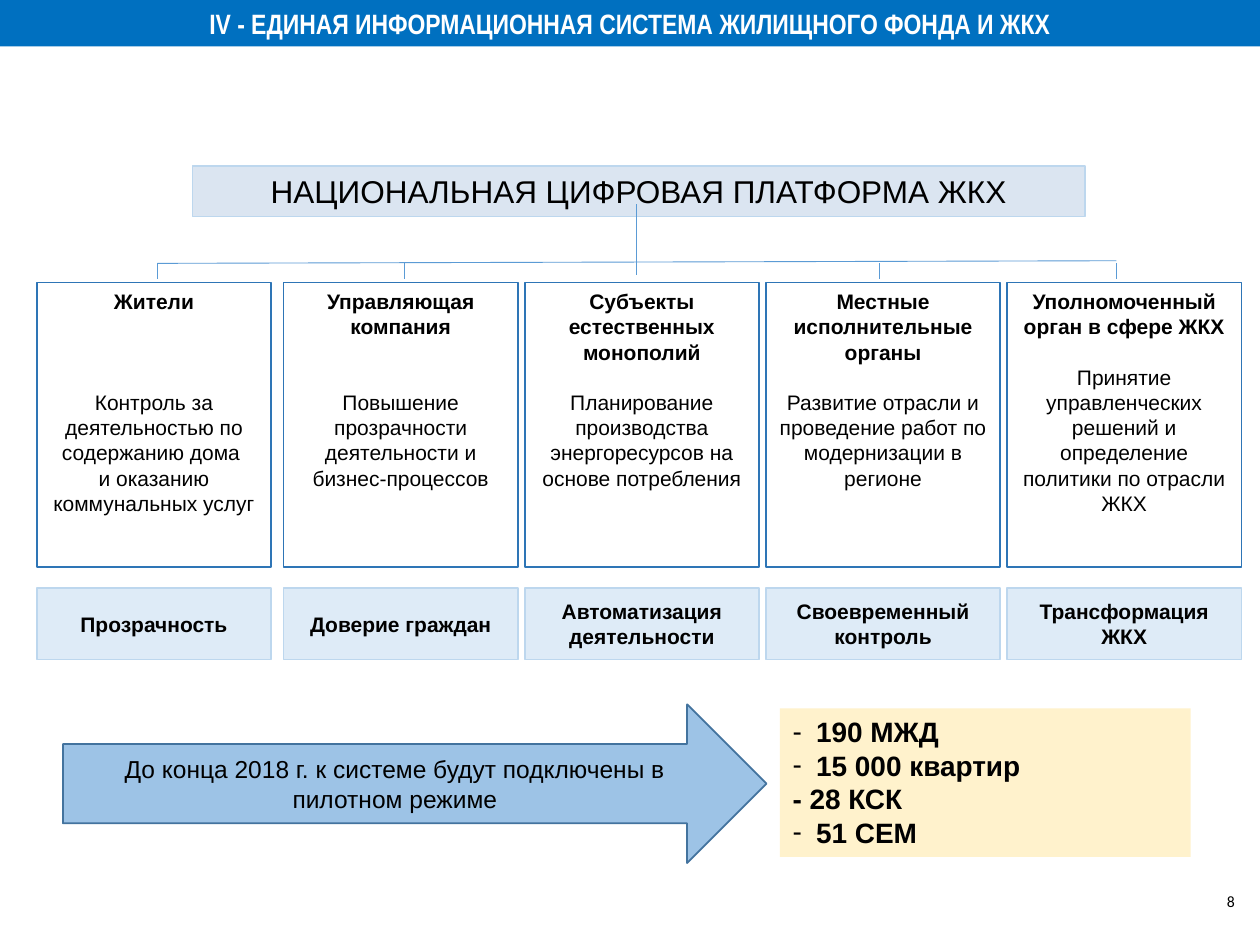
from pptx import Presentation
from pptx.dml.color import RGBColor
from pptx.enum.shapes import MSO_CONNECTOR as CONN, MSO_SHAPE as SHAPE
from pptx.enum.text import MSO_ANCHOR as ANCHOR, MSO_AUTO_SIZE as FIT, PP_ALIGN as ALIGN
from pptx.oxml.ns import qn
from pptx.util import Pt
from lxml.etree import SubElement

BLACK = RGBColor(0x00, 0x00, 0x00)
WHITE = RGBColor(0xFF, 0xFF, 0xFF)
BANNER = RGBColor(0x00, 0x70, 0xC0)
PLATFORM = RGBColor(0xB9, 0xCD, 0xE5)
PALE_LINE = RGBColor(0xBD, 0xD7, 0xEE)
CARD_LINE = RGBColor(0x2E, 0x75, 0xB6)
TREE_LINE = RGBColor(0x5B, 0x9B, 0xD5)
TAG = RGBColor(0xDE, 0xEB, 0xF7)
CREAM = RGBColor(0xFF, 0xF2, 0xCC)
ARROW = RGBColor(0x9D, 0xC3, 0xE6)
ARROW_LINE = RGBColor(0x43, 0x73, 0x9E)

LINE_12 = 14.4  # height of one line of 12 pt text

# heading, lines between heading and duty, duty, result
COLUMNS = [
    ("Жители", 3, "Контроль за деятельностью по содержанию дома \n"
     "и оказанию коммунальных услуг", "Прозрачность"),
    ("Управляющая компания", 2,
     "Повышение прозрачности деятельности и бизнес-процессов", "Доверие граждан"),
    ("Субъекты естественных монополий", 1,
     "Планирование производства энергоресурсов на основе потребления",
     "Автоматизация деятельности"),
    ("Местные исполнительные органы", 1,
     "Развитие отрасли и проведение работ по модернизации в регионе",
     "Своевременный контроль"),
    ("Уполномоченный орган в сфере ЖКХ", 1,
     "Принятие управленческих решений и определение политики по отрасли ЖКХ",
     "Трансформация ЖКХ"),
]
TARGETS = [("190 МЖД", True), ("15 000 квартир", True),
           ("- 28 КСК", False), ("51 СЕМ", True)]


class Deck:
    font = "Arial"

    def __init__(self, width, height):
        self.prs = Presentation()
        self.prs.slide_width, self.prs.slide_height = Pt(width), Pt(height)
        self.s = self.prs.slides.add_slide(self.prs.slide_layouts[1])

    def format(self, p, size, bold=False, color=BLACK, align=ALIGN.CENTER, font=None):
        p.alignment = align
        for r in p.runs:
            r.font.size, r.font.bold = Pt(size), bold
            r.font.name = font or self.font
            r.font.color.rgb = color

    def place(self, sp, box, fill):
        sp.left, sp.top, sp.width, sp.height = (Pt(v) for v in box)
        sp.fill.solid()
        sp.fill.fore_color.rgb = fill
        tf = sp.text_frame
        tf.word_wrap, tf.auto_size = True, FIT.NONE
        return tf

    def title(self, text, box, fill):
        tf = self.place(self.s.shapes.title, box, fill)
        tf.vertical_anchor = ANCHOR.MIDDLE
        tf.text = text
        self.format(tf.paragraphs[0], 16, True, WHITE, font="Arial Narrow")

    def bullets(self, items, box, fill):
        tf = self.place(self.s.placeholders[1], box, fill)
        tf.vertical_anchor = ANCHOR.TOP
        tf.text = "\n".join(text for text, _ in items)
        for p, (_, dashed) in zip(tf.paragraphs, items):
            self.format(p, 16, True, align=ALIGN.LEFT)
            p.space_before = Pt(0)
            pPr = p._p.get_or_add_pPr()
            indent = Pt(13.5) if dashed else 0
            pPr.set("marL", str(indent))
            pPr.set("indent", str(-indent))
            if dashed:
                SubElement(pPr, qn("a:buChar")).set("char", "-")
            else:
                SubElement(pPr, qn("a:buNone"))

    def box(self, text, box, fill, line, size=12, bold=False, width=1,
            shape=SHAPE.RECTANGLE, anchor=ANCHOR.MIDDLE):
        sp = self.s.shapes.add_shape(shape, *(Pt(v) for v in box))
        tf = self.place(sp, box, fill)
        sp.shadow.inherit = False
        sp.line.color.rgb, sp.line.width = line, Pt(width)
        tf.vertical_anchor = anchor
        tf.text = text
        self.format(tf.paragraphs[0], size, bold)
        return sp

    def card(self, heading, gap, duty, box):
        sp = self.box(heading, box, WHITE, CARD_LINE, bold=True, anchor=ANCHOR.TOP)
        p = sp.text_frame.add_paragraph()
        p.text = duty
        p.space_before = Pt(gap * LINE_12)
        self.format(p, 12)

    def line(self, x1, y1, x2, y2):
        c = self.s.shapes.add_connector(CONN.STRAIGHT, *(Pt(v) for v in (x1, y1, x2, y2)))
        c.line.color.rgb, c.line.width = TREE_LINE, Pt(0.5)
        SubElement(c._element.spPr, qn("a:effectLst"))

    def number(self, text, box):
        tf = self.s.shapes.add_textbox(*(Pt(v) for v in box)).text_frame
        tf.word_wrap, tf.vertical_anchor = True, ANCHOR.MIDDLE
        tf.margin_left = tf.margin_right = Pt(5)
        tf.margin_top = tf.margin_bottom = Pt(3)
        tf.text = text
        self.format(tf.paragraphs[0], 9, align=ALIGN.RIGHT, font="Calibri")


def main():
    deck = Deck(720, 540)

    # Banner
    deck.title("IV - ЕДИНАЯ ИНФОРМАЦИОННАЯ СИСТЕМА ЖИЛИЩНОГО ФОНДА И ЖКХ",
               (0, 0, 720, 26.6), BANNER)

    # Platform, half transparent
    platform = deck.box("НАЦИОНАЛЬНАЯ ЦИФРОВАЯ ПЛАТФОРМА ЖКХ", (110, 94.8, 510, 29),
                        PLATFORM, PALE_LINE, size=18, width=0.75)
    color = platform._element.spPr.find(qn("a:solidFill"))[0]
    SubElement(color, qn("a:alpha")).set("val", "50000")

    # Columns: the first stands apart, the others share one pitch
    for i, (heading, gap, duty, result) in enumerate(COLUMNS):
        x = 162 + 137.8 * (i - 1) if i else 21
        deck.card(heading, gap, duty, (x, 161.5, 134, 162.7))
        deck.box(result, (x, 336, 134, 41), TAG, PALE_LINE, bold=True)

    # Tree from the platform to the columns
    deck.line(90, 150.5, 637.9, 149)
    deck.line(363.6, 116.6, 363.6, 157)
    for x in (90, 231.1, 502.6, 637.9):
        deck.line(x, 150.5, x, 159.5)

    # Pilot stage
    deck.box("До конца 2018 г. к системе будут подключены в пилотном режиме",
             (36, 402.5, 402, 90.7), ARROW, ARROW_LINE, size=14, shape=SHAPE.RIGHT_ARROW)
    deck.bullets(TARGETS, (445.7, 404.8, 234.7, 84.8), CREAM)

    deck.number("8", (687.6, 500.4, 23, 28.8))
    deck.prs.save("out.pptx")


if __name__ == "__main__":
    main()
